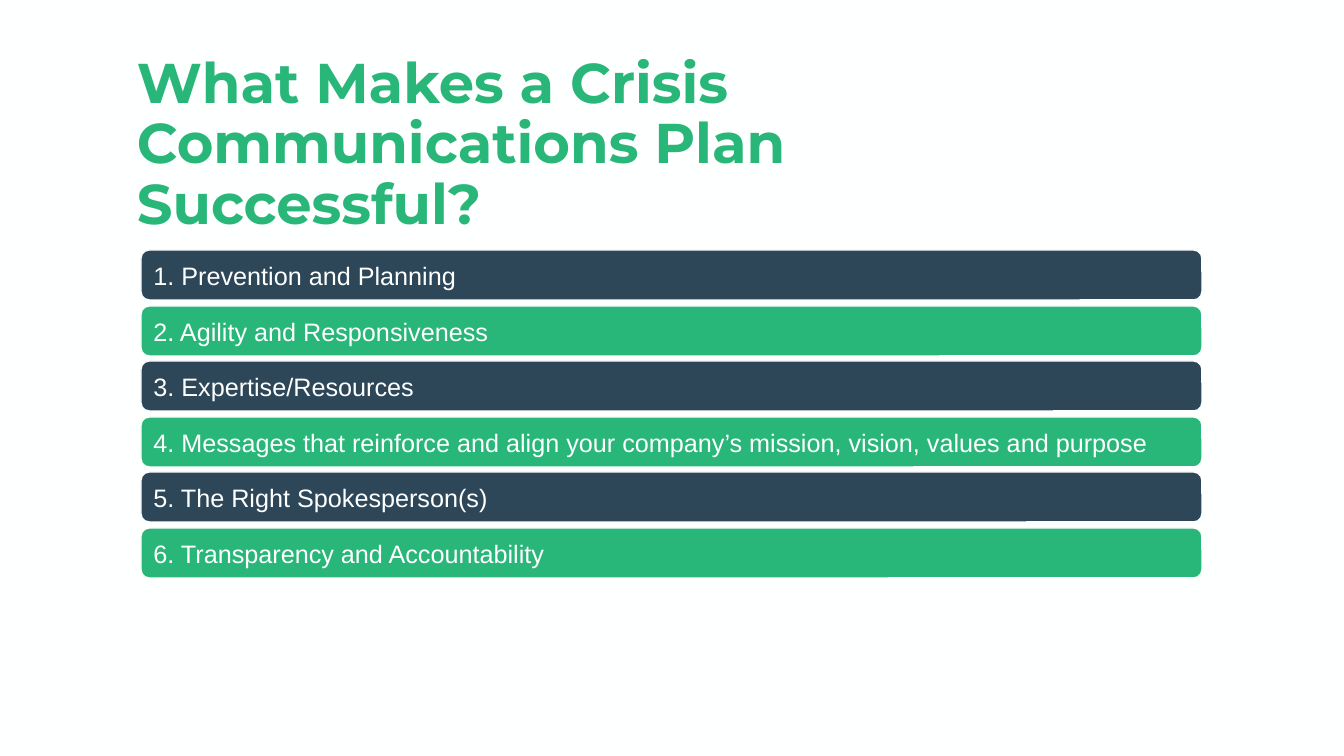
"""Build the slide on what makes a crisis communications plan successful."""
from dataclasses import dataclass

from lxml.etree import SubElement
from pptx import Presentation
from pptx.dml.color import RGBColor
from pptx.enum.shapes import MSO_SHAPE as Preset
from pptx.enum.text import MSO_ANCHOR as Anchor, PP_ALIGN as Align
from pptx.oxml.ns import qn
from pptx.util import Emu, Pt

COLOURS = {"paper": "FEFFFF", "green": "28B679", "navy": "173246"}
FORMATS = {
    "title": {"name": "Montserrat", "size": Pt(40), "bold": True},
    "factor": {"name": "Arial", "size": Pt(18), "bold": False},
}
FACTORS = (
    "Prevention and Planning",
    "Agility and Responsiveness",
    "Expertise/Resources",
    "Messages that reinforce and align your company’s mission, vision, values and purpose",
    "The Right Spokesperson(s)",
    "Transparency and Accountability",
)
FIRST_TOP, LAST_TOP = 250, 528


@dataclass(frozen=True)
class Bar:
    text: str
    top: int
    colour: str
    opacity: int
    left: int = 141
    width: int = 1061
    height: int = 50


def px(length: int) -> Emu:
    return Emu(round(length * 914400 / 100.8))


def rgb(name: str) -> RGBColor:
    return RGBColor.from_string(COLOURS[name])


def write(box, text: str, style: str, colour: str, inset: int, spacing: float) -> None:
    frame = box.text_frame
    settings = {
        "word_wrap": True,
        "vertical_anchor": Anchor.MIDDLE,
        "margin_left": px(inset),
        "margin_right": px(inset),
        "margin_top": px(5),
        "margin_bottom": px(5),
    }
    for name, value in settings.items():
        setattr(frame, name, value)
    para = frame.paragraphs[0]
    para.alignment = Align.LEFT
    para.line_spacing = spacing
    span = para.add_run()
    span.text = text
    for name, value in FORMATS[style].items():
        setattr(span.font, name, value)
    span.font.color.rgb = rgb(colour)


def draw_bar(page, bar: Bar) -> None:
    box = page.shapes.add_shape(
        Preset.ROUNDED_RECTANGLE, px(bar.left), px(bar.top), px(bar.width), px(bar.height)
    )
    box.shadow.inherit = False
    box.fill.solid()
    box.fill.fore_color.rgb = rgb(bar.colour)
    if bar.opacity < 100:
        colour = box.fill._xPr.find(qn("a:solidFill"))[0]
        SubElement(colour, qn("a:alpha"), val=str(bar.opacity * 1000))
    box.line.color.rgb = rgb("paper")
    box.line.width = Pt(1)
    write(box, bar.text, "factor", "paper", 10, 1.0)


def main() -> None:
    deck = Presentation()
    deck.slide_width, deck.slide_height = px(1344), px(756)
    page = deck.slides.add_slide(deck.slide_layouts[6])
    page.background.fill.solid()
    page.background.fill.fore_color.rgb = rgb("paper")

    title = page.shapes.add_textbox(px(127), px(107), px(966), px(77))
    write(title, "What Makes a Crisis Communications Plan Successful?", "title", "green", 10, 0.9)

    step = (LAST_TOP - FIRST_TOP) / (len(FACTORS) - 1)
    for index, factor in enumerate(FACTORS):
        colour, opacity = (("navy", 90), ("green", 100))[index % 2]
        top = round(FIRST_TOP + index * step)
        draw_bar(page, Bar(f"{index + 1}. {factor}", top, colour, opacity))

    deck.save("out.pptx")


if __name__ == "__main__":
    main()
